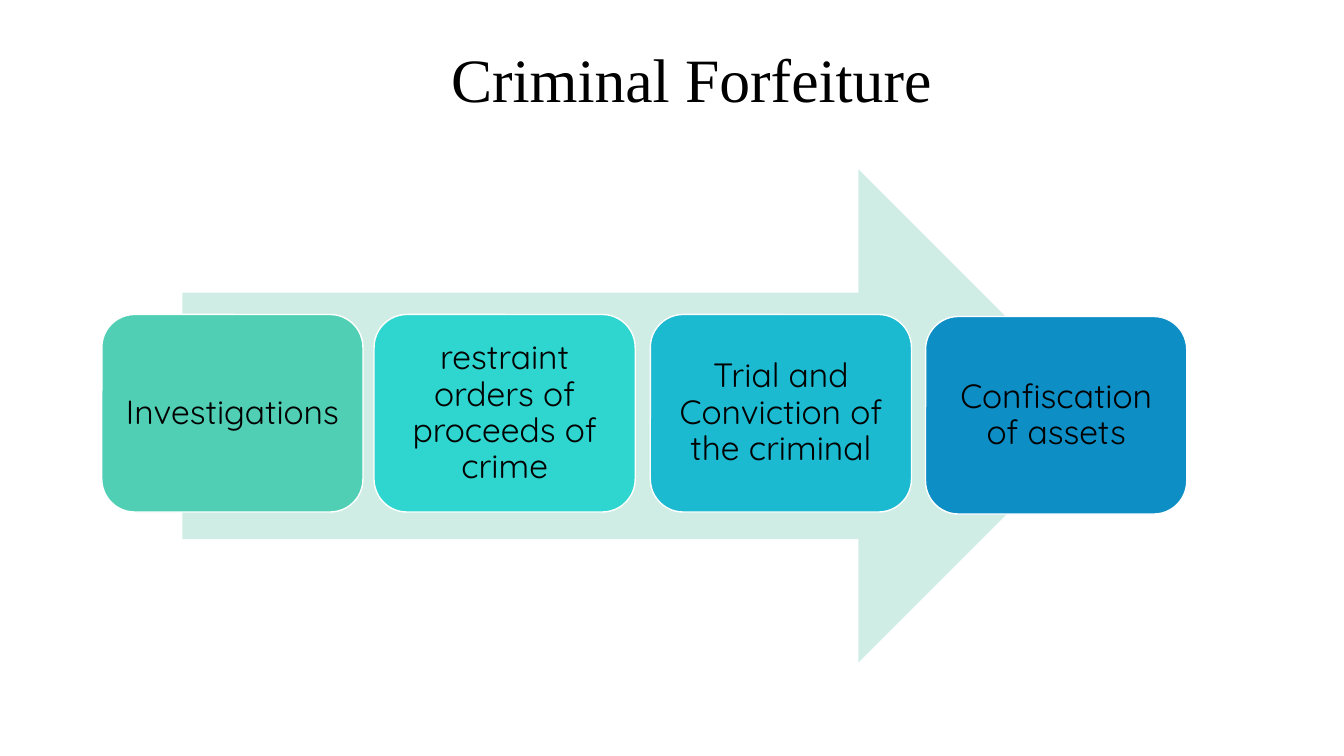
from pptx import Presentation
from pptx.dml.color import RGBColor as RGB
from pptx.enum.shapes import MSO_SHAPE as SHAPE
from pptx.enum.text import MSO_ANCHOR as ANCHOR, PP_ALIGN as ALIGN
from pptx.util import Inches, Pt

# Content
BLACK = RGB(0x00, 0x00, 0x00)
WHITE = RGB(0xFF, 0xFF, 0xFF)
MINT = RGB(0xD0, 0xED, 0xE5)
GREEN = RGB(0x50, 0xCF, 0xB4)
AQUA = RGB(0x2F, 0xD6, 0xCF)
TEAL = RGB(0x1B, 0xBA, 0xD1)
BLUE = RGB(0x0D, 0x8E, 0xC5)

TITLE = "Criminal Forfeiture"
STEPS = [  # text, fill, left, top
    ("Investigations", GREEN, 1.01, 3.12),
    ("restraint orders of proceeds of crime", AQUA, 3.71, 3.12),
    ("Trial and Conviction of the criminal", TEAL, 6.45, 3.12),
    ("Confiscation of assets", BLUE, 9.18, 3.14),
]
STEP_W, STEP_H = 2.59, 1.96


def write(shape, text, font, size, inset=0.1):
    frame = shape.text_frame
    frame.word_wrap = True
    frame.vertical_anchor = ANCHOR.MIDDLE
    frame.margin_left = frame.margin_right = Inches(inset)
    frame.margin_top = frame.margin_bottom = Inches(inset)
    para = frame.paragraphs[0]
    para.alignment = ALIGN.CENTER
    para.line_spacing = 0.9
    run = para.add_run()
    run.text = text
    run.font.name = font
    run.font.size = Pt(size)
    run.font.color.rgb = BLACK


def place(shape, *box):
    shape.left, shape.top, shape.width, shape.height = map(Inches, box)


def draw(kind, fill, *box):
    shape = slide.shapes.add_shape(kind, *map(Inches, box))
    shape.shadow.inherit = False
    shape.fill.solid()
    shape.fill.fore_color.rgb = fill
    shape.line.fill.background()
    return shape


deck = Presentation()
deck.slide_width, deck.slide_height = Inches(13.33), Inches(7.5)
slide = deck.slides.add_slide(deck.slide_layouts[5])

# Title
title = slide.shapes.title
place(title, 1.14, 0.18, 11.44, 1.28)
write(title, TITLE, "Times New Roman", 44)

# Arrow behind the steps
draw(SHAPE.RIGHT_ARROW, MINT, 1.81, 1.68, 9.15, 4.89)

# Steps
for text, fill, left, top in STEPS:
    step = draw(SHAPE.ROUNDED_RECTANGLE, fill, left, top, STEP_W, STEP_H)
    step.line.color.rgb = WHITE
    step.line.width = Pt(1)
    write(step, text, "Quicksand", 24)

deck.save("out.pptx")
